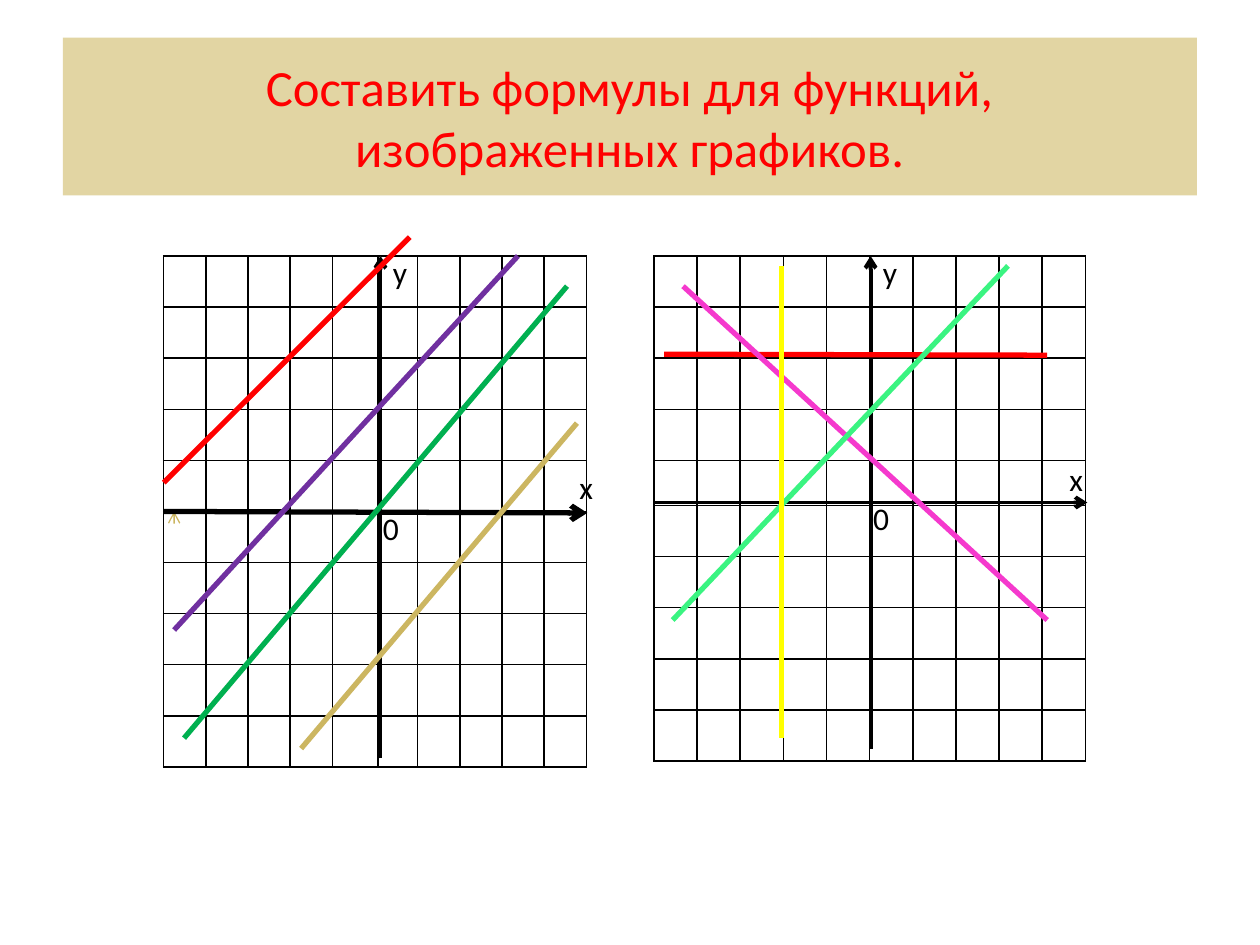
from dataclasses import dataclass

from lxml import etree
from pptx import Presentation
from pptx.dml.color import RGBColor
from pptx.enum.shapes import MSO_CONNECTOR
from pptx.enum.text import MSO_ANCHOR, PP_ALIGN
from pptx.oxml.ns import qn
from pptx.util import Cm, Pt

STRAIGHT = MSO_CONNECTOR.STRAIGHT
MIDDLE = MSO_ANCHOR.MIDDLE
TOP = MSO_ANCHOR.TOP
CENTER = PP_ALIGN.CENTER
LEFT = PP_ALIGN.LEFT
BLANK_LAYOUT = 6


@dataclass(frozen=True)
class Theme:
    font: str = "Calibri"
    title_size: int = 29
    label_size: int = 18
    graph_width: float = 3
    axis_width: float = 2.25
    mark_width: float = 0.75
    grid_width: float = 1
    black: str = "000000"
    banner: str = "E2D5A3"
    red: str = "FF0000"
    pink: str = "F539CD"
    mint: str = "3AF481"
    yellow: str = "FFFF00"
    green: str = "00B050"
    sand: str = "CCB661"
    purple: str = "7030A0"


class SlideBuilder:
    def __init__(self, page, theme):
        self.page = page
        self.theme = theme

    def text(self, content, place, size, color, align=LEFT, anchor=TOP, fill=None):
        box = self.page.shapes.add_textbox(*map(Cm, place))
        if fill:
            box.fill.solid()
            box.fill.fore_color.rgb = RGBColor.from_string(fill)
        frame = box.text_frame
        frame.word_wrap = True
        frame.vertical_anchor = anchor
        para = frame.paragraphs[0]
        para.text = content
        para.alignment = align
        para.font.name = self.theme.font
        para.font.size = Pt(size)
        para.font.color.rgb = RGBColor.from_string(color)

    def label(self, content, left, top, width):
        self.text(content, (left, top, width, 1.02),
                  self.theme.label_size, self.theme.black)

    def line(self, start, end, color, width, arrow=False):
        connector = self.page.shapes.add_connector(
            STRAIGHT, *map(Cm, (*start, *end)))
        connector.line.color.rgb = RGBColor.from_string(color)
        connector.line.width = Pt(width)
        if arrow:
            outline = connector.line._get_or_add_ln()
            etree.SubElement(outline, qn("a:tailEnd"), type="arrow")
        etree.SubElement(connector._element.spPr, qn("a:effectLst"))

    def axis(self, start, end, width):
        self.line(start, end, self.theme.black, width, arrow=True)

    def graphs(self, *graphs):
        for color, start, end in graphs:
            self.line(start, end, color, self.theme.graph_width)

    def grid(self, left, top, columns, rows):
        table = self.page.shapes.add_table(
            len(rows), len(columns), Cm(left), Cm(top),
            Cm(sum(columns)), Cm(sum(rows))).table
        table.first_row = False
        table.horz_banding = False
        for column, width in zip(table.columns, columns):
            column.width = Cm(width)
        for row, height in zip(table.rows, rows):
            row.height = Cm(height)
        for cell in table.iter_cells():
            cell.margin_top = cell.margin_bottom = 0
            self.cell_borders(cell)
            cell.fill.background()

    def cell_borders(self, cell):
        properties = cell._tc.get_or_add_tcPr()
        for side in ("lnL", "lnR", "lnT", "lnB"):
            border = etree.SubElement(properties, qn(f"a:{side}"),
                                      w=str(Pt(self.theme.grid_width)))
            fill = etree.SubElement(border, qn("a:solidFill"))
            etree.SubElement(fill, qn("a:srgbClr"), val=self.theme.black)


def main():
    deck = Presentation()
    deck.slide_width, deck.slide_height = Cm(25.4), Cm(19.05)
    page = deck.slides.add_slide(deck.slide_layouts[BLANK_LAYOUT])
    theme = Theme()
    builder = SlideBuilder(page, theme)

    # Title banner
    builder.text("Составить формулы для функций,\vизображенных графиков.",
                 (1.27, 0.76, 22.86, 3.18), theme.title_size, theme.red,
                 CENTER, MIDDLE, theme.banner)

    # Squared grids
    grid_top, cell_height = 5.16, 1.03
    builder.grid(3.3, grid_top, [0.85] * 4 + [0.92, 0.8] + [0.85] * 4,
                 [cell_height] * 10)
    builder.grid(13.18, grid_top, [0.87] * 10,
                 [cell_height] * 4 + [0.91] + [cell_height] * 5)

    # Right axes and graphs
    builder.axis((17.55, 15.09), (17.55, grid_top), theme.axis_width)
    builder.label("у", 17.55, 4.98, 1)
    builder.axis((13.18, 10.13), (21.92, 10.13), theme.axis_width)
    builder.label("х", 21.31, 9.14, 1)
    builder.label("0", 17.35, 9.93, 1.24)
    builder.graphs(
        (theme.red, (13.39, 7.14), (21.11, 7.16)),
        (theme.pink, (13.77, 5.77), (21.11, 12.5)),
        (theme.mint, (13.56, 12.5), (20.32, 5.36)),
        (theme.yellow, (15.75, 5.36), (15.75, 14.88)),
    )

    # Small marks at the ends of the left axes
    builder.line((7.67, 5.18), (7.67, grid_top), theme.sand, theme.mark_width)
    builder.line((3.51, 10.34), (3.51, 10.31), theme.sand, theme.mark_width,
                 arrow=True)

    # Left axes and graphs
    builder.axis((7.67, 15.29), (7.67, grid_top), theme.axis_width)
    builder.axis((3.3, 10.31), (11.84, 10.34), theme.graph_width)
    builder.label("у", 7.67, 4.98, 1.19)
    builder.label("0", 7.47, 10.13, 2.39)
    builder.label("х", 11.43, 9.32, 0.79)
    builder.graphs(
        (theme.green, (3.71, 14.88), (11.43, 5.77)),
        (theme.sand, (6.07, 15.09), (11.63, 8.53)),
        (theme.purple, (3.51, 12.7), (10.44, 5.16)),
        (theme.red, (3.3, 9.73), (8.26, 4.78)),
    )

    deck.save("out.pptx")


if __name__ == "__main__":
    main()
